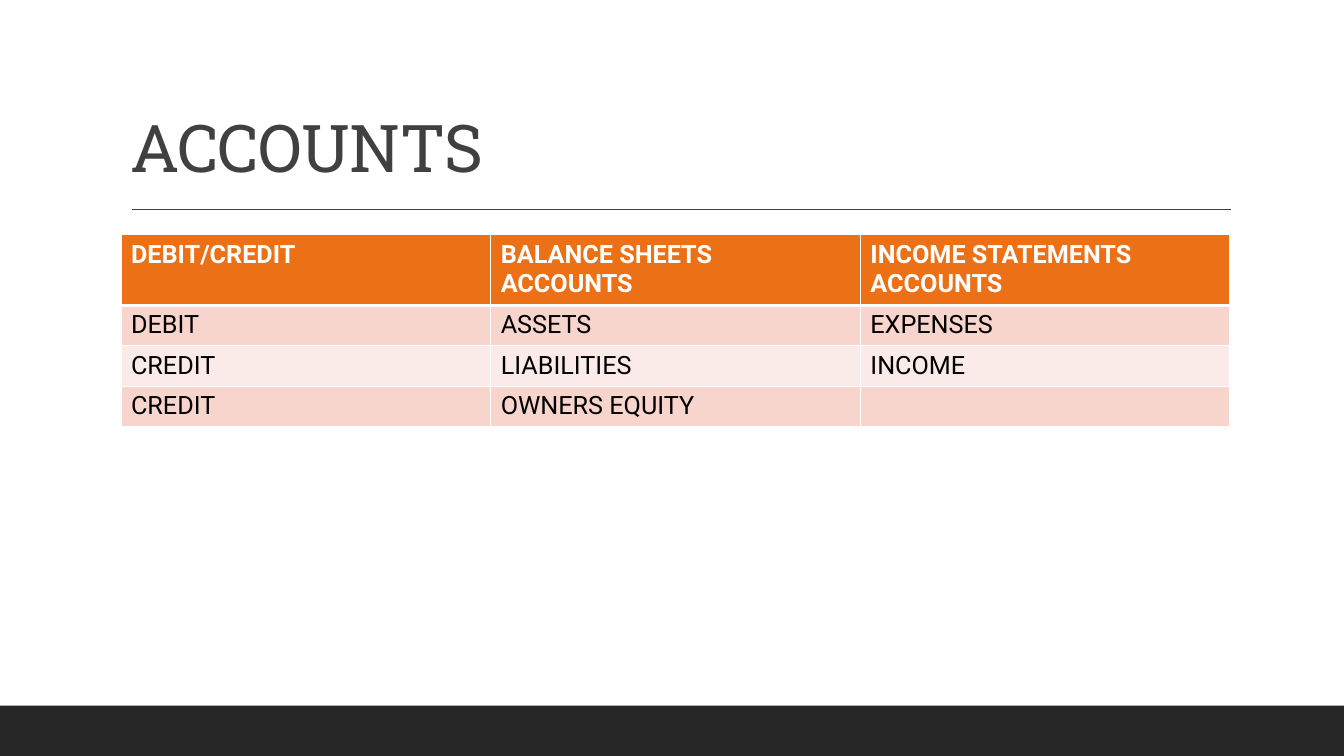
"""Build the ACCOUNTS slide: a title, a rule, a debit/credit table and a footer band."""
import pptx
import pptx.util
import pptx.dml.color
import pptx.enum.shapes
import pptx.enum.text
import pptx.oxml.ns
import lxml.etree

Inches, Pt = pptx.util.Inches, pptx.util.Pt
qn = pptx.oxml.ns.qn


def color(hex_code):
    return pptx.dml.color.RGBColor.from_string(hex_code)


def write(paragraph, text, style, hex_code):
    run = paragraph.add_run()
    run.text = text
    for name, value in style.items():
        setattr(run.font, name, value)
    run.font.color.rgb = color(hex_code)
    return run


deck = pptx.Presentation()
deck.slide_width, deck.slide_height = Inches(13.33), Inches(7.5)
slide = deck.slides.add_slide(deck.slide_layouts[6])
shapes = slide.shapes

margin, content_width = Inches(1.2), Inches(11)
footer_height = deck.slide_height // 15

footer = shapes.add_shape(pptx.enum.shapes.MSO_SHAPE.RECTANGLE, 0, deck.slide_height - footer_height,
                          deck.slide_width, footer_height)
footer.shadow.inherit = False
footer.fill.solid()
footer.fill.fore_color.rgb = color("262626")
footer.line.fill.background()

title_rule = shapes.add_connector(pptx.enum.shapes.MSO_CONNECTOR.STRAIGHT,
                                  Inches(1.31), Inches(2.08), Inches(12.21), Inches(2.08))
title_rule.line.color.rgb = color("404040")
title_rule.line.width = Pt(1)
lxml.etree.SubElement(title_rule._element.spPr, qn("a:effectLst"))

heading = shapes.add_textbox(margin, Inches(0.31), content_width, Inches(1.59)).text_frame
heading.word_wrap = True
heading.vertical_anchor = pptx.enum.text.MSO_ANCHOR.BOTTOM
heading.paragraphs[0].line_spacing = 0.9
heading_run = write(heading.paragraphs[0], "ACCOUNTS", {"name": "Roboto Slab", "size": Pt(47)}, "404040")
heading_run.font._element.set("spc", "-50")

account_rows = [
    ["DEBIT/CREDIT", "BALANCE SHEETS ACCOUNTS", "INCOME STATEMENTS ACCOUNTS"],
    ["DEBIT", "ASSETS", "EXPENSES"],
    ["CREDIT", "LIABILITIES", "INCOME"],
    ["CREDIT", "OWNERS EQUITY", ""],
]
row_fills = ["EC7016", "F8D5CC", "FBEBE8", "F8D5CC"]
row_heights = [0.69, 0.4, 0.4, 0.4]

accounts = shapes.add_table(len(account_rows), len(account_rows[0]), margin, Inches(2.33),
                            content_width, Inches(sum(row_heights))).table
for index, labels in enumerate(account_rows):
    accounts.rows[index].height = Inches(row_heights[index])
    is_header = index == 0
    edge_widths = {"a:lnL": 1, "a:lnR": 1, "a:lnT": 3 if index == 1 else 1, "a:lnB": 3 if is_header else 1}
    for column, label in enumerate(labels):
        cell = accounts.cell(index, column)
        properties = cell._tc.get_or_add_tcPr()
        for edge, width in edge_widths.items():
            border = lxml.etree.SubElement(properties, qn(edge), w=str(Pt(width)))
            border_fill = lxml.etree.SubElement(border, qn("a:solidFill"))
            lxml.etree.SubElement(border_fill, qn("a:srgbClr"), val="FFFFFF")
        cell.fill.solid()
        cell.fill.fore_color.rgb = color(row_fills[index])
        if label:
            write(cell.text_frame.paragraphs[0], label,
                  {"name": "Roboto", "size": Pt(18), "bold": is_header},
                  "FFFFFF" if is_header else "000000")

deck.save("out.pptx")
